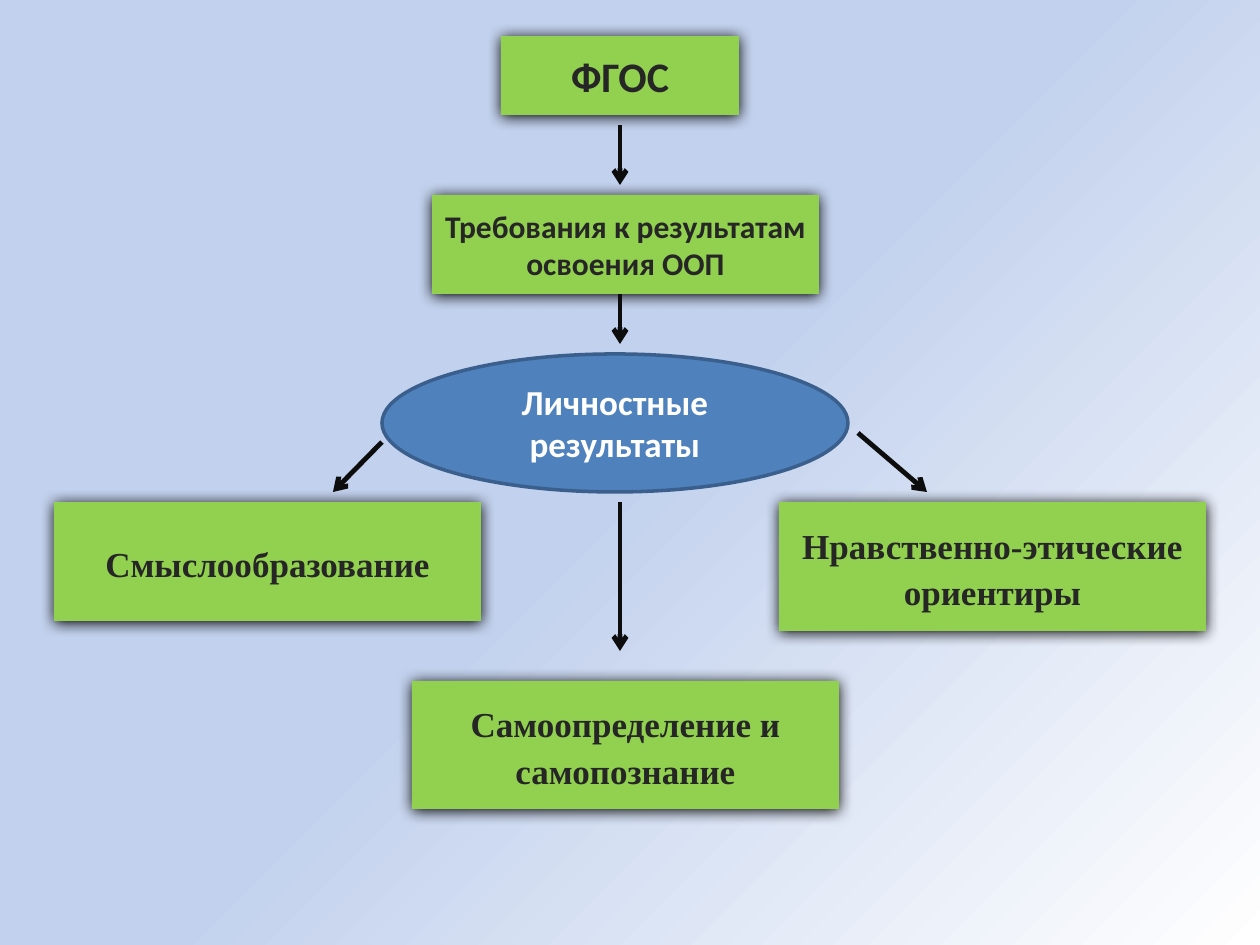
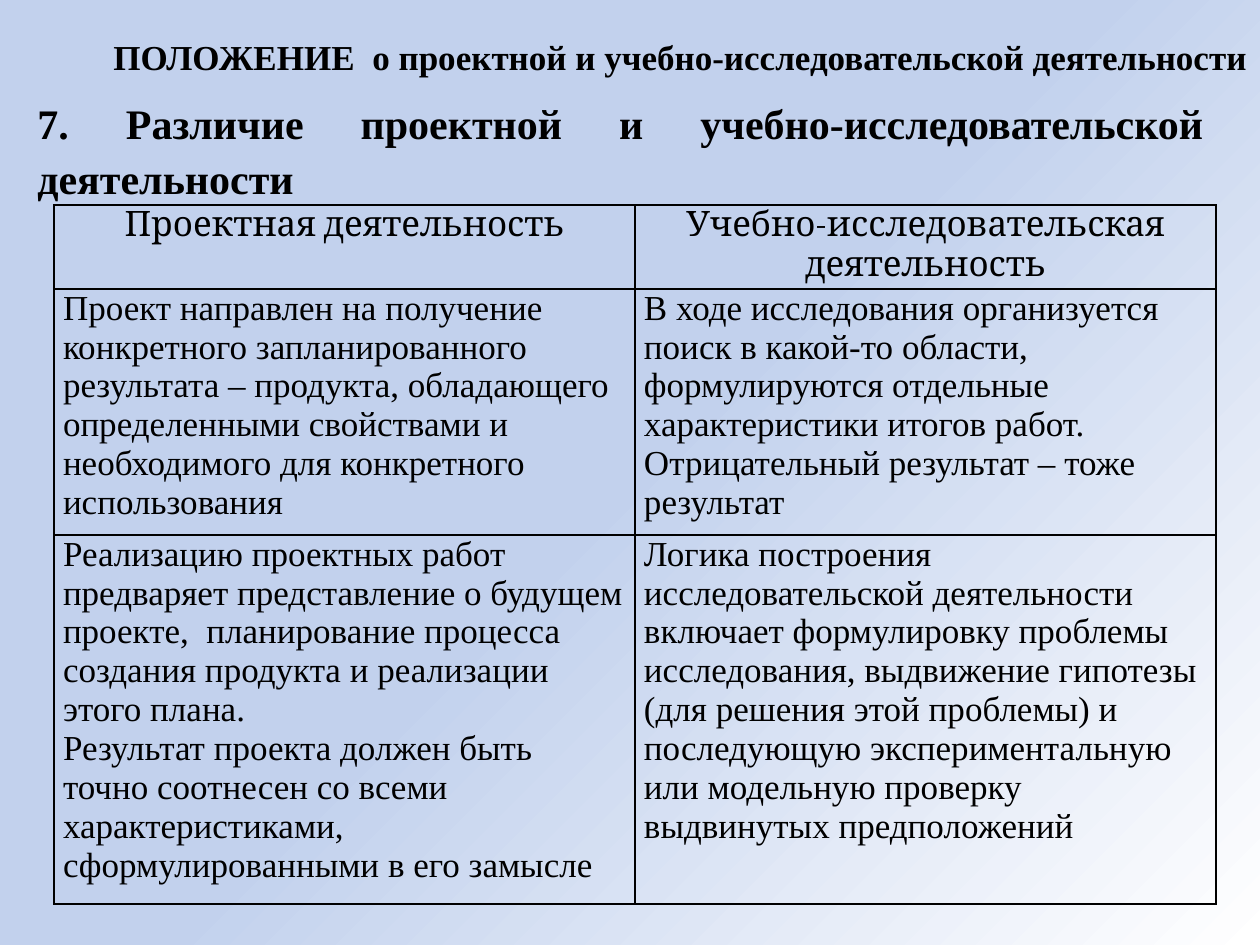
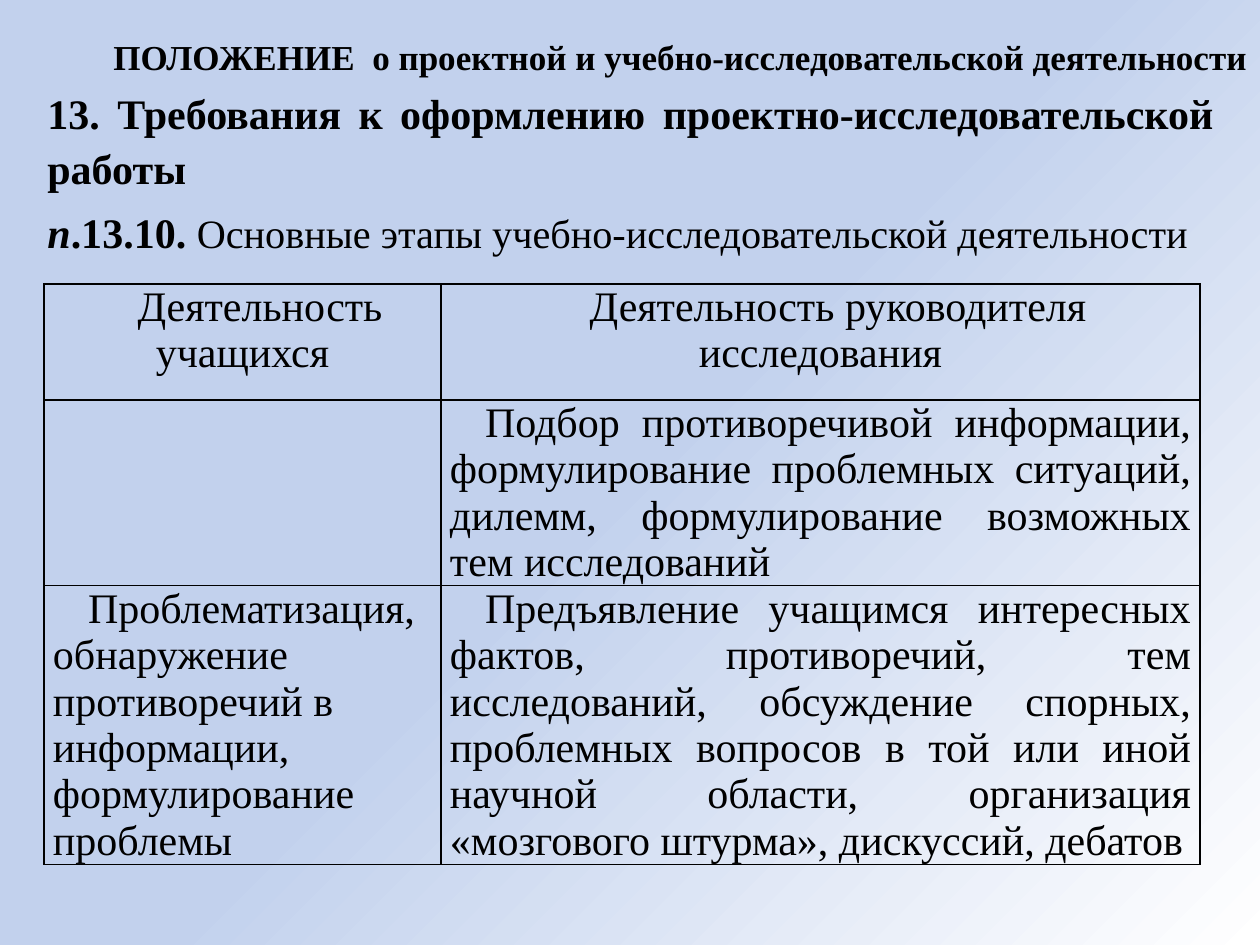
"""Build three slides on the results and rules of pupils' project and research work."""
from dataclasses import dataclass

from pptx import Presentation
from pptx.dml.color import RGBColor as Rgb
from pptx.enum.shapes import MSO_CONNECTOR as Connector, MSO_SHAPE as Shape
from pptx.enum.text import MSO_ANCHOR as Anchor, MSO_AUTO_SIZE as AutoSize, PP_ALIGN as Align
from pptx.oxml import parse_xml
from pptx.oxml.ns import nsdecls
from pptx.util import Emu, Pt


@dataclass(frozen=True)
class Theme:
    green: Rgb = Rgb.from_string("92D050")
    blue: Rgb = Rgb.from_string("4F81BD")
    outline: Rgb = Rgb.from_string("3A5F8C")
    arrow: Rgb = Rgb.from_string("0D0D0D")
    dark: Rgb = Rgb.from_string("262626")
    black: Rgb = Rgb.from_string("000000")
    white: Rgb = Rgb.from_string("FFFFFF")
    sans: str = "Calibri"
    serif: str = "Times New Roman"
    header: str = "Cambria"
    small: Pt = Pt(18)
    body: Pt = Pt(20)
    stage: Pt = Pt(23)
    large: Pt = Pt(24)
    gap: Pt = Pt(4.8)


theme = Theme()
SCALE = 914400 / 126


def px(*lengths):
    return [Emu(round(length * SCALE)) for length in lengths]


def write(frame, paragraphs, font, layout, color=theme.black, indent=0, gap=Pt(0)):
    for index, content in enumerate(paragraphs):
        para = frame.add_paragraph() if index else frame.paragraphs[0]
        for name, value in layout.items():
            setattr(para, name, value)
        para.space_before = gap if index else Pt(0)
        if indent:
            para._p.get_or_add_pPr().set("indent", str(px(indent)[0]))
        spans = [(content, {})] if isinstance(content, str) else content
        for text, changes in spans:
            span = para.add_run()
            span.text = text
            for name, value in {**font, **changes}.items():
                setattr(span.font, name, value)
            span.font.color.rgb = color


deck = Presentation()
deck.slide_width, deck.slide_height = px(1260, 945)

backdrop = deck.slide_master.background.fill
backdrop.solid()
backdrop_holder = deck.slide_master.element.xpath(".//p:bgPr")[0]
stops = "".join(
    f'<a:gs pos="{place * 1000}"><a:srgbClr val="{color}"/></a:gs>'
    for place, color in [(0, "BFBFBF"), (0, "FFFFFF"), (50, "C2D1ED")]
)
backdrop_holder.replace(backdrop_holder[0], parse_xml(
    f'<a:gradFill {nsdecls("a")} rotWithShape="1"><a:gsLst>{stops}</a:gsLst>'
    '<a:path path="circle"><a:fillToRect l="100000" t="100000"/></a:path></a:gradFill>'
))

page = deck.slides.add_slide(deck.slide_layouts[6])
boxes = [
    ("ФГОС", (501, 36, 238, 79), theme.sans, theme.large),
    ("Требования к результатам освоения ООП", (432, 195, 387, 99), theme.sans, theme.small),
    ("Личностные результаты", (382, 354, 466, 138), theme.sans, theme.body),
    ("Смыслообразование", (54, 502, 427, 119), theme.serif, theme.body),
    ("Самоопределение и самопознание", (412, 681, 427, 128), theme.serif, theme.body),
    ("Нравственно-этические ориентиры", (779, 502, 427, 129), theme.serif, theme.body),
]
for text, place, face, size in boxes:
    is_hub = text == "Личностные результаты"
    box = page.shapes.add_shape(Shape.OVAL if is_hub else Shape.RECTANGLE, *px(*place))
    box.shadow.inherit = False
    box.fill.solid()
    if is_hub:
        box.fill.fore_color.rgb = theme.blue
        box.line.color.rgb = theme.outline
        box.line.width = Pt(2)
    else:
        box.fill.fore_color.rgb = theme.green
        box.line.fill.background()
        box._element.spPr.xpath("a:effectLst")[0].append(parse_xml(
            f'<a:outerShdw {nsdecls("a")} blurRad="{Pt(8.5)}" dist="{Pt(1)}" dir="5400000" '
            'algn="ctr" rotWithShape="0"><a:srgbClr val="000000"/></a:outerShdw>'
        ))
    box.text_frame.word_wrap = True
    box.text_frame.vertical_anchor = Anchor.MIDDLE
    write(
        box.text_frame, [text],
        {"name": face, "size": size, "bold": True},
        {"alignment": Align.CENTER, "line_spacing": 1.1 if face == theme.serif else 1.0},
        theme.white if is_hub else theme.dark,
    )

arrows = [
    (620, 125, 620, 185),
    (620, 294, 620, 344),
    (382, 442, 333, 492),
    (620, 502, 620, 651),
    (858, 433, 927, 492),
]
for ends in arrows:
    arrow = page.shapes.add_connector(Connector.STRAIGHT, *px(*ends))
    arrow.line.color.rgb = theme.arrow
    arrow.line.width = Pt(2.75)
    arrow.line._get_or_add_ln().append(parse_xml(f'<a:tailEnd {nsdecls("a")} type="arrow"/>'))
    arrow._element.spPr.append(parse_xml(f'<a:effectLst {nsdecls("a")}/>'))

table_pages = [
    {
        "intro": ["7. Различие проектной и учебно-исследовательской деятельности"],
        "intro_place": (25, 86, 1191, 110),
        "corner": (54, 205),
        "columns": (581, 581),
        "rows": (84, 246, 369),
        "size": theme.body,
        "header": theme.header,
        "indent": 0,
        "justified": (),
        "cells": [
            [["Проектная деятельность"], ["Учебно-исследовательская", "деятельность"]],
            [
                [
                    "Проект направлен на получение конкретного запланированного результата – "
                    "продукта, обладающего определенными свойствами и",
                    "необходимого для конкретного использования",
                ],
                [
                    "В ходе исследования организуется поиск в какой-то области, "
                    "формулируются отдельные характеристики итогов работ.",
                    "Отрицательный результат – тоже результат",
                ],
            ],
            [
                [
                    "Реализацию проектных работ предваряет представление о будущем проекте,  "
                    "планирование процесса создания продукта и реализации этого плана.",
                    "Результат проекта должен быть точно соотнесен со всеми "
                    "характеристиками, сформулированными в его замысле",
                ],
                [
                    "Логика построения исследовательской деятельности включает формулировку "
                    "проблемы исследования, выдвижение гипотезы (для решения этой проблемы) "
                    "и последующую экспериментальную или модельную проверку "
                    "выдвинутых предположений",
                ],
            ],
        ],
    },
    {
        "intro": [
            "13. Требования к оформлению проектно-исследовательской работы",
            [
                ("п", {"italic": True}),
                (".13.10. ", {}),
                ("Основные этапы учебно-исследовательской деятельности",
                 {"size": theme.stage, "bold": False}),
            ],
        ],
        "intro_place": (35, 76, 1191, 839),
        "corner": (44, 284),
        "columns": (397, 759),
        "rows": (116, 178, 237),
        "size": theme.large,
        "header": theme.serif,
        "indent": 35,
        "justified": (1,),
        "cells": [
            [["Деятельность учащихся"], ["Деятельность руководителя исследования"]],
            [
                [],
                [
                    "Подбор противоречивой информации, формулирование проблемных ситуаций, "
                    "дилемм, формулирование возможных тем исследований",
                ],
            ],
            [
                [
                    "Проблематизация, обнаружение противоречий в информации, "
                    "формулирование проблемы",
                ],
                [
                    "Предъявление учащимся интересных фактов, противоречий, тем исследований, "
                    "обсуждение спорных, проблемных вопросов в той или иной научной области, "
                    "организация «мозгового штурма», дискуссий, дебатов",
                ],
            ],
        ],
    },
]
cell_format = dict(zip(
    ("margin_left", "margin_right", "margin_top", "margin_bottom"), px(9, 9, 0, 0)
))
frame_format = {"word_wrap": True, "auto_size": AutoSize.NONE}

for content in table_pages:
    page = deck.slides.add_slide(deck.slide_layouts[5])
    title = page.shapes.title
    title.left, title.top, title.width, title.height = px(25, 27, 1235, 59)
    intro = page.shapes.add_textbox(*px(*content["intro_place"]))
    for holder, anchor in [(title, Anchor.MIDDLE), (intro, Anchor.TOP)]:
        for name, value in {**frame_format, "vertical_anchor": anchor}.items():
            setattr(holder.text_frame, name, value)
    write(
        title.text_frame,
        ["ПОЛОЖЕНИЕ  о проектной и учебно-исследовательской деятельности"],
        {"name": theme.serif, "size": theme.body, "bold": True},
        {"alignment": Align.RIGHT},
    )
    write(
        intro.text_frame, content["intro"],
        {"name": theme.serif, "size": theme.large, "bold": True},
        {"alignment": Align.JUSTIFY, "line_spacing": 1.1},
        gap=theme.gap,
    )

    columns, rows = content["columns"], content["rows"]
    table = page.shapes.add_table(
        len(rows), len(columns), *px(*content["corner"], sum(columns), sum(rows))
    ).table
    table.first_row = table.horz_banding = False
    for column, width in zip(table.columns, px(*columns)):
        column.width = width
    for row, height in zip(table.rows, px(*rows)):
        row.height = height
    for row_index, row_texts in enumerate(content["cells"]):
        for column_index, paragraphs in enumerate(row_texts):
            cell = table.cell(row_index, column_index)
            for name, value in cell_format.items():
                setattr(cell, name, value)
            cell.fill.background()
            properties = cell._tc.get_or_add_tcPr()
            for order, side in enumerate("LRTB"):
                properties.insert(order, parse_xml(
                    f'<a:ln{side} {nsdecls("a")} w="{Pt(1)}"><a:solidFill>'
                    f'<a:srgbClr val="{theme.black}"/></a:solidFill></a:ln{side}>'
                ))
            is_header = row_index == 0
            body_align = Align.JUSTIFY if column_index in content["justified"] else Align.LEFT
            write(
                cell.text_frame, paragraphs,
                {"name": content["header"] if is_header else theme.serif,
                 "size": content["size"], "bold": False},
                {"alignment": Align.CENTER if is_header else body_align},
                indent=content["indent"],
            )

deck.save("out.pptx")
